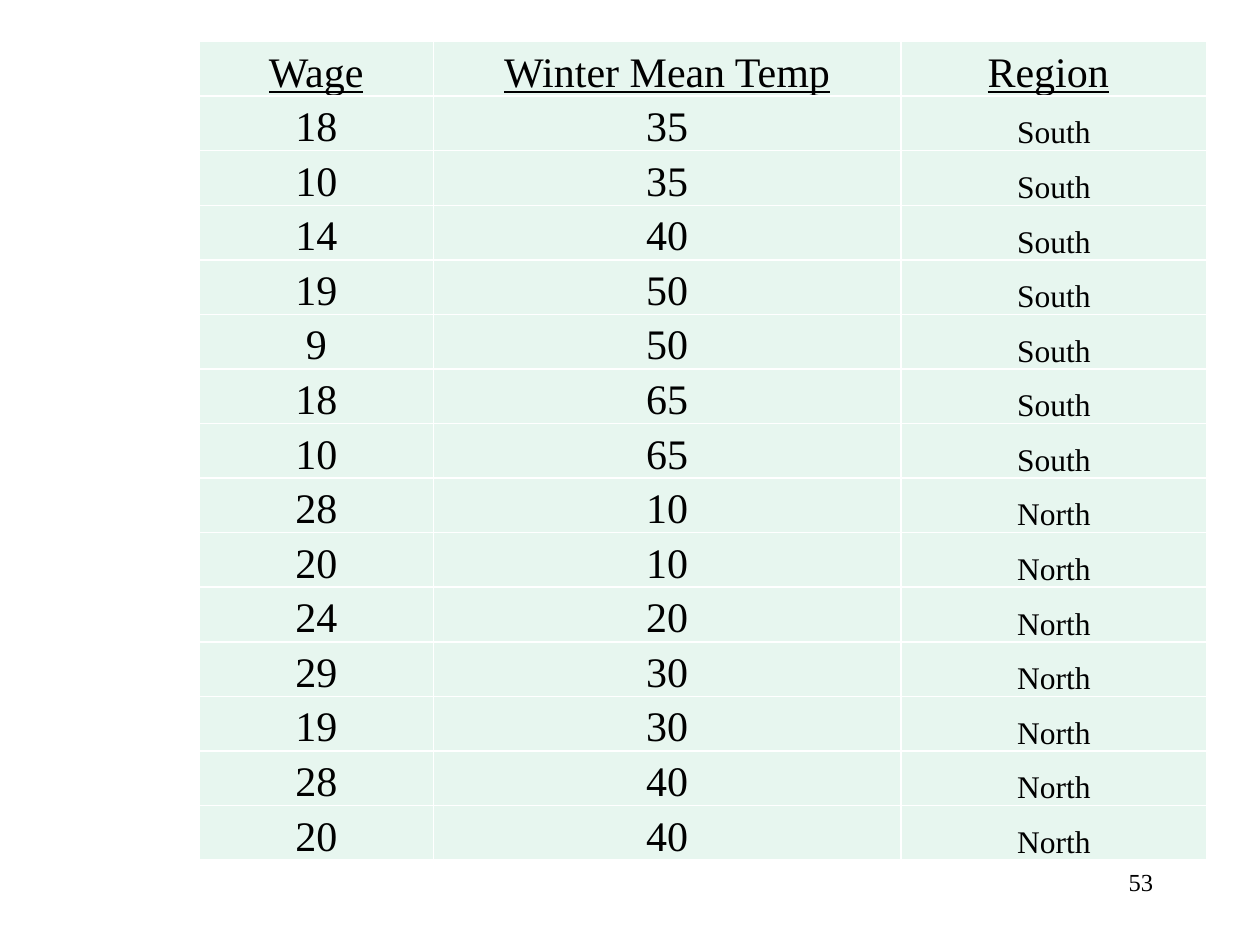
from lxml.etree import SubElement
from pptx import Presentation
from pptx.dml.color import RGBColor
from pptx.enum.text import MSO_ANCHOR, PP_ALIGN
from pptx.oxml.ns import qn
from pptx.util import Inches, Pt

BLACK = RGBColor(0x00, 0x00, 0x00)
WHITE = RGBColor(0xFF, 0xFF, 0xFF)
MINT = RGBColor(0xE7, 0xF6, 0xEF)

HEADERS = ("Wage", "Winter Mean Temp", "Region")
REGIONS = {
    "South": [(18, 35), (10, 35), (14, 40), (19, 50), (9, 50), (18, 65), (10, 65)],
    "North": [(28, 10), (20, 10), (24, 20), (29, 30), (19, 30), (28, 40), (20, 40)],
}
COL_WIDTHS = (1.86, 3.71, 2.43)


class SlideBuilder:
    """Holds the style and the current slide."""

    font = {"name": "Times New Roman", "bold": False}
    cell_format = {
        "vertical_anchor": MSO_ANCHOR.BOTTOM,
        "margin_left": Inches(0.01),
        "margin_top": Inches(0.01),
        "margin_right": Inches(0.01),
        "margin_bottom": 0,
    }

    def __init__(self, slide):
        self.slide = slide

    def add_text(self, tf, text, size, align, underline=False):
        p = tf.paragraphs[0]
        p.alignment = align
        r = p.add_run()
        r.text = text
        formats = {**self.font, "size": Pt(size), "underline": underline}
        for name, value in formats.items():
            setattr(r.font, name, value)
        r.font.color.rgb = BLACK

    def borders(self, cell):
        tc_pr = cell._tc.get_or_add_tcPr()
        for side in ("lnL", "lnR", "lnT", "lnB"):
            ln = SubElement(tc_pr, qn(f"a:{side}"), w=str(Pt(1)))
            fill = SubElement(ln, qn("a:solidFill"))
            SubElement(fill, qn("a:srgbClr"), val=str(WHITE))

    def table(self, rows, left, top, width, height):
        frame = self.slide.shapes.add_table(
            len(rows), len(COL_WIDTHS),
            Inches(left), Inches(top), Inches(width), Inches(height))
        table = frame.table
        table.first_row = table.horz_banding = False
        for column, col_width in zip(table.columns, COL_WIDTHS):
            column.width = Inches(col_width)
        for i, row in enumerate(rows):
            for j, value in enumerate(row):
                cell = table.cell(i, j)
                for name, setting in self.cell_format.items():
                    setattr(cell, name, setting)
                self.borders(cell)
                cell.fill.solid()
                cell.fill.fore_color.rgb = MINT
                size = 18 if value in REGIONS else 24
                self.add_text(cell.text_frame, str(value), size,
                              PP_ALIGN.CENTER, underline=i == 0)
        return table

    def text_box(self, text, size, align, left, top, width, height):
        sp = self.slide.shapes.add_textbox(
            Inches(left), Inches(top), Inches(width), Inches(height))
        sp.text_frame.word_wrap = True
        self.add_text(sp.text_frame, text, size, align)


def main():
    prs = Presentation()
    prs.slide_width, prs.slide_height = Inches(10), Inches(7.5)
    s = SlideBuilder(prs.slides.add_slide(prs.slide_layouts[6]))

    # Wage and temperature by region
    rows = [HEADERS]
    rows += [(*pair, region) for region, pairs in REGIONS.items() for pair in pairs]
    table = s.table(rows, 1.58, 0.33, 8, 6.5)
    # The last header sits slightly left of centre
    table.cell(0, 2).margin_right = Inches(0.1)

    # Slide number
    s.text_box("53", 14, PP_ALIGN.RIGHT, 7.17, 6.83, 2.08, 0.5)

    prs.save("out.pptx")


if __name__ == "__main__":
    main()
